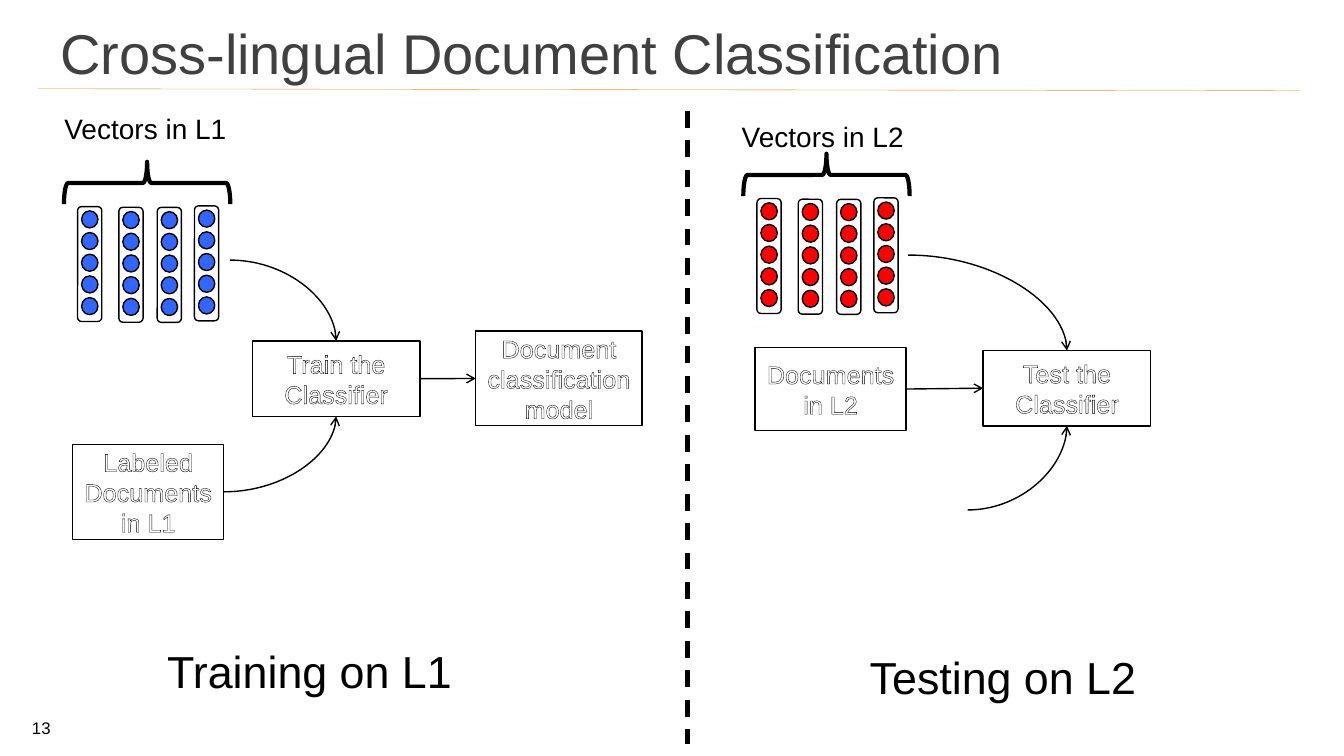
from lxml.etree import SubElement
from pptx import Presentation
from pptx.dml.color import RGBColor
from pptx.enum.dml import MSO_LINE
from pptx.enum.shapes import MSO_CONNECTOR, MSO_SHAPE
from pptx.enum.text import MSO_ANCHOR, PP_ALIGN
from pptx.oxml.ns import qn
from pptx.util import Pt

BLACK = RGBColor(0, 0, 0)
WHITE = RGBColor(255, 255, 255)
GREY = RGBColor(0x40, 0x40, 0x40)
ORANGE = RGBColor(0xEA, 0x8A, 0x2A)
BLUE = RGBColor(0x33, 0x66, 0xFF)
RED = RGBColor(255, 0, 0)

LABELS = [
    ("Cross-lingual Document Classification", (36, 16.56, 835.92, 41.76),
     dict(size=40, color=GREY, anchor=MSO_ANCHOR.MIDDLE)),
    ("13", (9.36, 512.64, 40.32, 18),
     dict(size=12, align=PP_ALIGN.CENTER, anchor=MSO_ANCHOR.BOTTOM)),
    ("Training on L1", (112.32, 456.48, 219.6, 46.08), dict(size=32, wrap=False)),
    ("Testing on L2", (614.16, 460.8, 206.64, 46.08), dict(size=32, wrap=False)),
]
BOXES = {
    "train": ("Train the Classifier", (180.22, 243.5, 119.8, 54)),
    "labeled": ("Labeled Documents in L1", (51.84, 317.5, 108, 67.7)),
    "test": ("Test the Classifier", (702.22, 250.4, 119.8, 53.8)),
    "documents": ("Documents in L2", (539.28, 248.4, 108, 59)),
    "model": ("Document classification model", (339.84, 236.5, 118.8, 67.7)),
}
VECTOR_SETS = [
    ("Vectors in L1", (38.88, 76.32), (55.44, 147.6), BLUE),
    ("Vectors in L2", (522.72, 82.08), (540.72, 141.84), RED),
]
COLUMN_OFFSETS = [(0, 0), (29.5, 0.5), (56.9, 0.6), (83.5, -0.5)]
COLUMN_SIZE = (17.28, 82.08)
DOT_SIZE = (11.7, 12.2)
DOT_INSET = (2.8, 3)
DOTS, DOT_PITCH = 5, 15.5
BRACE_OFFSET, BRACE_SIZE = (34.5, -76.3), (30.24, 118.8)

CURVES = [
    ((164.3, 185.8), "train", 0),
    ("labeled", "train", 2),
    ((648.7, 182.2), "test", 0),
    ((691.2, 364.3), "test", 2),
]
ARROWS = [("train", "model"), ("documents", "test")]


def pts(*values):
    return [Pt(v) for v in values]


def put_text(s, text, size=18, color=BLACK, align=PP_ALIGN.LEFT,
             anchor=MSO_ANCHOR.TOP, wrap=True, outline=False):
    tf = s.text_frame
    tf.word_wrap = wrap
    tf.vertical_anchor = anchor
    p = tf.paragraphs[0]
    p.alignment = align
    r = p.add_run()
    r.text = text
    r.font.name = "Arial"
    r.font.size = Pt(size)
    r.font.color.rgb = color
    if outline:
        rpr = r.font._element if hasattr(r.font, "_element") else r._r.get_or_add_rPr()
        ln = SubElement(rpr, qn("a:ln"), w=str(Pt(0.75)))
        fill = SubElement(ln, qn("a:solidFill"))
        SubElement(fill, qn("a:srgbClr"), val=str(BLACK))
        rpr.insert(0, ln)


def add_outlined(shapes, kind, place, fill=None, width=1):
    s = shapes.add_shape(kind, *pts(*place))
    s.shadow.inherit = False
    if fill is None:
        s.fill.background()
    else:
        s.fill.solid()
        s.fill.fore_color.rgb = fill
    s.line.color.rgb = BLACK
    s.line.width = Pt(width)
    return s


def add_line(shapes, ends, color=BLACK, width=1, kind=MSO_CONNECTOR.STRAIGHT, arrow=False):
    c = shapes.add_connector(kind, *pts(*ends))
    c.line.color.rgb = color
    c.line.width = Pt(width)
    sppr = c._element.spPr
    if arrow:
        SubElement(sppr.find(qn("a:ln")), qn("a:tailEnd"), type="arrow")
    SubElement(sppr, qn("a:effectLst"))
    return c


def side_point(name, side):
    x, y, w, h = BOXES[name][1]
    return [(x + w / 2, y), (x, y + h / 2), (x + w / 2, y + h), (x + w, y + h / 2)][side]


def add_vectors(shapes, label, label_at, origin, color):
    group = shapes.add_group_shape().shapes
    left, top = origin
    for dx, dy in COLUMN_OFFSETS:
        x, y = left + dx, top + dy
        add_outlined(group, MSO_SHAPE.ROUNDED_RECTANGLE, (x, y, *COLUMN_SIZE), WHITE)
        for i in range(DOTS):
            place = (x + DOT_INSET[0], y + DOT_INSET[1] + i * DOT_PITCH, *DOT_SIZE)
            add_outlined(group, MSO_SHAPE.OVAL, place, color)
    place = (left + BRACE_OFFSET[0], top + BRACE_OFFSET[1], *BRACE_SIZE)
    brace = add_outlined(group, MSO_SHAPE.LEFT_BRACE, place, width=3)
    brace.rotation = 90
    brace.adjustments[0] = 0.098
    put_text(group.add_textbox(*pts(*label_at, 132.48, 31.68)), label, size=20, wrap=False)


def main():
    prs = Presentation()
    prs.slide_width, prs.slide_height = pts(960, 540)
    shapes = prs.slides.add_slide(prs.slide_layouts[6]).shapes

    add_line(shapes, (27.36, 63.4, 928.8, 64.8), ORANGE, 0.25)
    divider = add_line(shapes, (491.04, 79.2, 491.04, 531.36), width=3)
    divider.line.dash_style = MSO_LINE.DASH

    for text, place, style in LABELS:
        put_text(shapes.add_textbox(*pts(*place)), text, **style)

    boxes = {}
    for name, (text, place) in BOXES.items():
        boxes[name] = add_outlined(shapes, MSO_SHAPE.RECTANGLE, place, WHITE)
        put_text(boxes[name], text, color=WHITE, align=PP_ALIGN.CENTER,
                 anchor=MSO_ANCHOR.MIDDLE, outline=True)

    for vectors in VECTOR_SETS:
        add_vectors(shapes, *vectors)

    for start, target, side in CURVES:
        begin = side_point(start, 3) if start in boxes else start
        c = add_line(shapes, (*begin, *side_point(target, side)),
                     kind=MSO_CONNECTOR.CURVE, arrow=True)
        c._element.spPr.find(qn("a:prstGeom")).set("prst", "curvedConnector2")
        if start in boxes:
            c.begin_connect(boxes[start], 3)
        c.end_connect(boxes[target], side)

    for start, target in ARROWS:
        c = add_line(shapes, (*side_point(start, 3), *side_point(target, 1)), arrow=True)
        c.begin_connect(boxes[start], 3)
        c.end_connect(boxes[target], 1)

    prs.save("out.pptx")


if __name__ == "__main__":
    main()
